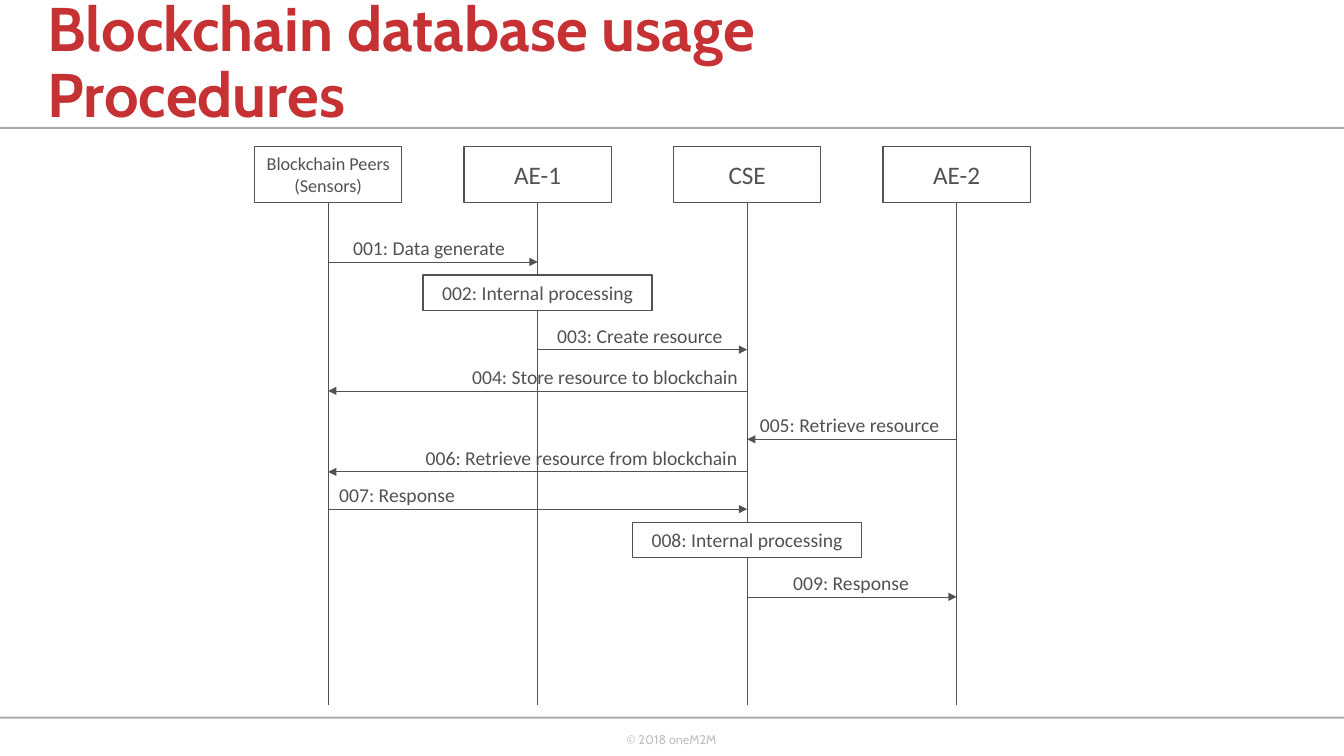
from dataclasses import dataclass

import pptx
import pptx.dml.color
import pptx.enum.shapes
import pptx.enum.text
import pptx.oxml.xmlchemy
import pptx.util


@dataclass(frozen=True)
class Theme:
    red: str = "C63133"
    ink: str = "545054"
    rule: str = "A7A9AC"
    footer: str = "BFBFBF"
    white: str = "FFFFFF"
    head_font: str = "Cabin"
    body_font: str = "Calibri"
    title_size: float = 44
    name_size: float = 18
    small_name_size: float = 13
    step_size: float = 14
    footer_size: float = 9
    box_line: float = 1
    thin_line: float = 0.5


@dataclass(frozen=True)
class Participant:
    name: str
    size: float


@dataclass(frozen=True)
class Message:
    """An arrow between two lifelines, with its label just above."""
    text: str
    source: int
    target: int
    y: float
    label_left: float
    label_width: float


@dataclass(frozen=True)
class Processing:
    text: str
    lifeline: int
    top: float


Cm = pptx.util.Cm
Pt = pptx.util.Pt
Align = pptx.enum.text.PP_ALIGN

THEME = Theme()
SLIDE_W, SLIDE_H = 33.87, 19.05
FIRST_X, PITCH = 8.27, 5.28
HEAD_TOP, HEAD_W, HEAD_H = 3.69, 3.71, 1.42
LIFELINE_END = 17.76
STEP_W, STEP_H = 5.77, 0.89
LABEL_H, LABEL_RISE = 0.86, 0.78

PARTICIPANTS = [
    Participant("Blockchain Peers\n(Sensors)", THEME.small_name_size),
    Participant("AE-1", THEME.name_size),
    Participant("CSE", THEME.name_size),
    Participant("AE-2", THEME.name_size),
]
PEERS, AE1, CSE, AE2 = range(len(PARTICIPANTS))

MESSAGES = [
    Message("001: Data generate", PEERS, AE1, 6.6, 8.65, 4.4),
    Message("003: Create resource", AE1, CSE, 8.81, 13.79, 4.72),
    Message("004: Store resource to blockchain", CSE, PEERS, 9.85, 11.65, 7.27),
    Message("005: Retrieve resource", AE2, CSE, 11.07, 18.9, 5.08),
    Message("006: Retrieve resource from blockchain", CSE, PEERS, 11.89, 10.48, 8.43),
    Message("007: Response", PEERS, CSE, 12.83, 8.3, 3.45),
    Message("009: Response", CSE, AE2, 15.04, 19.74, 3.45),
]
PROCESSINGS = [
    Processing("002: Internal processing", AE1, 6.93),
    Processing("008: Internal processing", CSE, 13.16),
]


def rgb(color: str) -> pptx.dml.color.RGBColor:
    return pptx.dml.color.RGBColor.from_string(color)


def lifeline_x(index: int) -> float:
    return FIRST_X + PITCH * index


def write(tf, text: str, font: str, size: float, color: str,
          align=Align.LEFT, bold: bool = False) -> None:
    p = tf.paragraphs[0]
    p.text = text
    p.alignment = align
    for r in p.runs:
        r.font.name = font
        r.font.size = Pt(size)
        r.font.bold = bold
        r.font.color.rgb = rgb(color)


def add_rect(s, left: float, top: float, width: float, height: float, fill: str):
    sp = s.shapes.add_shape(pptx.enum.shapes.MSO_SHAPE.RECTANGLE,
                            Cm(left), Cm(top), Cm(width), Cm(height))
    sp.shadow.inherit = False
    sp.fill.solid()
    sp.fill.fore_color.rgb = rgb(fill)
    sp.line.fill.background()
    return sp


def add_box(s, center_x: float, top: float, width: float, height: float,
            text: str, size: float) -> None:
    sp = add_rect(s, center_x - width / 2, top, width, height, THEME.white)
    sp.line.color.rgb = rgb(THEME.ink)
    sp.line.width = Pt(THEME.box_line)
    tf = sp.text_frame
    tf.margin_left = tf.margin_right = tf.margin_top = tf.margin_bottom = 0
    tf.vertical_anchor = pptx.enum.text.MSO_ANCHOR.MIDDLE
    write(tf, text, THEME.body_font, size, THEME.ink, Align.CENTER)


def add_label(s, left: float, top: float, width: float, height: float,
              text: str, font: str, size: float, color: str) -> None:
    tf = s.shapes.add_textbox(Cm(left), Cm(top), Cm(width), Cm(height)).text_frame
    tf.word_wrap = False
    tf.auto_size = pptx.enum.text.MSO_AUTO_SIZE.SHAPE_TO_FIT_TEXT
    write(tf, text, font, size, color)


def add_line(s, x1: float, y1: float, x2: float, y2: float, arrow: bool = False) -> None:
    c = s.shapes.add_connector(pptx.enum.shapes.MSO_CONNECTOR.STRAIGHT,
                               Cm(x1), Cm(y1), Cm(x2), Cm(y2))
    c.line.color.rgb = rgb(THEME.ink)
    c.line.width = Pt(THEME.thin_line)
    props = c._element.spPr
    if arrow:
        tail = pptx.oxml.xmlchemy.OxmlElement("a:tailEnd")
        tail.set("type", "triangle")
        props.get_or_add_ln().append(tail)
    props.append(pptx.oxml.xmlchemy.OxmlElement("a:effectLst"))


def add_title(s, text: str) -> None:
    sp = s.shapes.title
    sp.left, sp.top, sp.width, sp.height = Cm(0.94), Cm(0), Cm(26.19), Cm(3.25)
    tf = sp.text_frame
    tf.word_wrap = True
    tf.auto_size = pptx.enum.text.MSO_AUTO_SIZE.NONE
    tf.vertical_anchor = pptx.enum.text.MSO_ANCHOR.MIDDLE
    tf.margin_right = Cm(1)
    write(tf, text, THEME.head_font, THEME.title_size, THEME.red, bold=True)
    tf.paragraphs[0].line_spacing = 0.9


def add_frame(s) -> None:
    """Draw the two page rules and the copyright line."""
    for top in (3.2, 18.06):
        add_rect(s, 0, top, SLIDE_W, 0.05, THEME.rule)
    add_label(s, 15.54, 18.31, 2.77, 1.02, "© 2018 oneM2M",
              THEME.head_font, THEME.footer_size, THEME.footer)


def add_sequence(s) -> None:
    for i, participant in enumerate(PARTICIPANTS):
        x = lifeline_x(i)
        add_box(s, x, HEAD_TOP, HEAD_W, HEAD_H, participant.name, participant.size)
        add_line(s, x, HEAD_TOP + HEAD_H, x, LIFELINE_END)
    for m in MESSAGES:
        add_line(s, lifeline_x(m.source), m.y, lifeline_x(m.target), m.y, arrow=True)
        add_label(s, m.label_left, m.y - LABEL_RISE, m.label_width, LABEL_H,
                  m.text, THEME.body_font, THEME.step_size, THEME.ink)
    for step in PROCESSINGS:
        add_box(s, lifeline_x(step.lifeline), step.top, STEP_W, STEP_H,
                step.text, THEME.step_size)


def main() -> None:
    prs = pptx.Presentation()
    prs.slide_width, prs.slide_height = Cm(SLIDE_W), Cm(SLIDE_H)
    s = prs.slides.add_slide(prs.slide_layouts.get_by_name("Title Only"))
    add_frame(s)
    add_title(s, "Blockchain database usage Procedures")
    add_sequence(s)
    prs.save("out.pptx")


if __name__ == "__main__":
    main()
